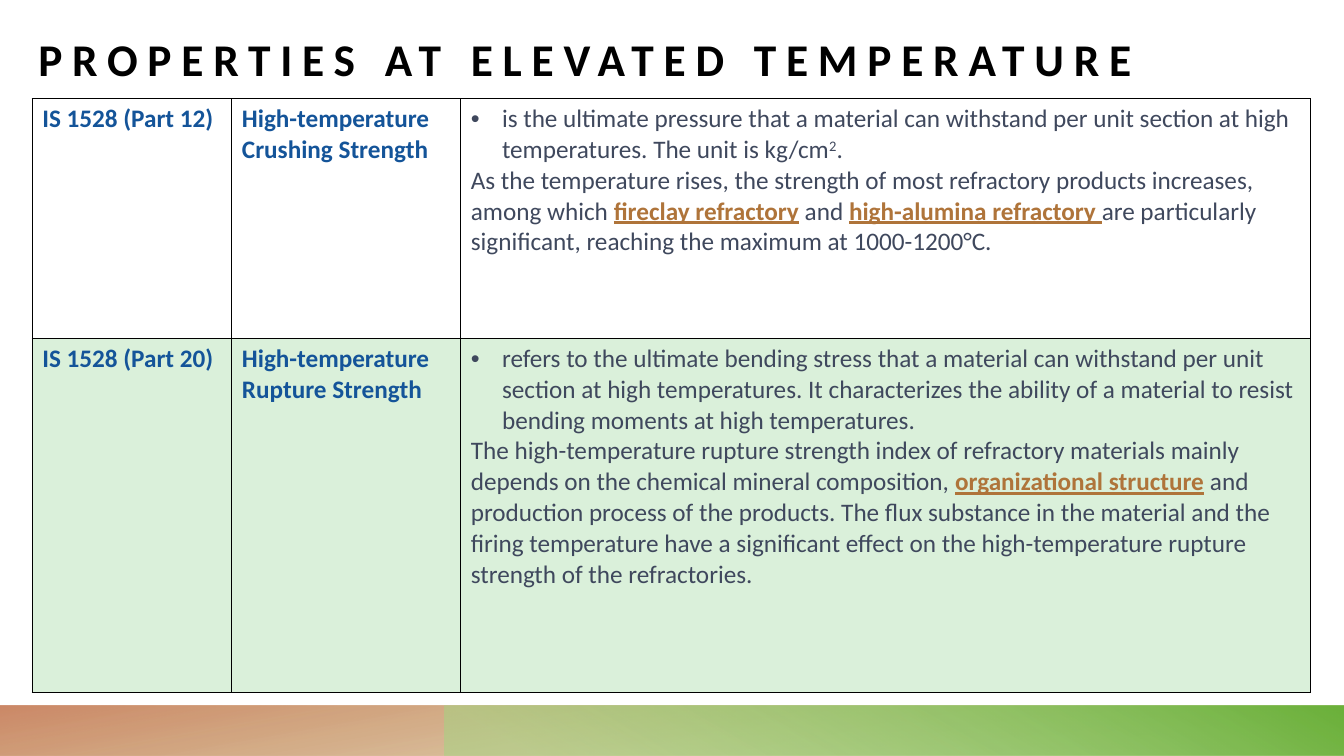
from lxml import etree
from pptx import Presentation
from pptx import util as u
from pptx.dml.color import RGBColor
from pptx.enum import shapes, text
from pptx.oxml.ns import qn

BLACK = RGBColor(0x00, 0x00, 0x00)
BLUE = RGBColor(0x14, 0x54, 0x99)
SLATE = RGBColor(0x3F, 0x48, 0x5D)
COPPER = RGBColor(0xAF, 0x74, 0x3A)
GREEN = RGBColor(0x47, 0xB5, 0x47)
OLIVE = RGBColor(0xB1, 0x93, 0x3B)
CLAY = RGBColor(0xC3, 0x74, 0x4D)
LIME = RGBColor(0xA6, 0xD6, 0x84)
LEAF = RGBColor(0x6C, 0xB1, 0x3B)
FONT = "Calibri"

HEADING = "PROPERTIES AT ELEVATED TEMPERATURE"
# Each paragraph is a list of (words, style); the first one of a cell is bulleted.
PROPERTIES = [
    ("IS 1528 (Part 12)", "High-temperature Crushing Strength", [
        [("is the ultimate pressure that a material can withstand per unit section "
          "at high temperatures. The unit is kg/cm", "plain"),
         ("2", "super"), (".", "plain")],
        [("As the temperature rises, the strength of most refractory products "
          "increases, among which ", "plain"),
         ("fireclay refractory", "term"), (" and ", "plain"),
         ("high-alumina refractory ", "term"),
         ("are particularly significant, reaching the maximum at 1000-1200°C.",
          "plain")],
    ]),
    ("IS 1528 (Part 20)", "High-temperature Rupture Strength", [
        [("refers to the ultimate bending stress that a material can withstand per "
          "unit section at high temperatures. It characterizes the ability of a "
          "material to resist bending moments at high temperatures.", "plain")],
        [("The high-temperature rupture strength index of refractory materials "
          "mainly depends on the chemical mineral composition, ", "plain"),
         ("organizational structure", "term"),
         (" and production process of the products. The flux substance in the "
          "material and the firing temperature have a significant effect on the "
          "high-temperature rupture strength of the refractories.", "plain")],
    ]),
]
COLUMNS = (1.98, 2.27, 8.43)
ROWS = (2.38, 3.51)
ROW_TINTS = (None, GREEN)
TABLE_LEFT, TABLE_TOP = 0.32, 0.98
WIDTH, HEIGHT = 13.33, 7.5
BAND_HEIGHT = HEIGHT / 15
# left, rotation, gradient angle (clockwise), stops as (position, colour, opacity)
BANDS = [
    (0, 180, 100, [(14, OLIVE, 28), (100, CLAY, 85)]),
    (WIDTH - 8.92, 0, 240, [(9, LIME, 55), (99, LEAF, 100)]),
]


def set_opacity(element, percents):
    """Give each RGB colour inside element its opacity in turn."""
    for colour, percent in zip(element.iter(qn("a:srgbClr")), percents):
        etree.SubElement(colour, qn("a:alpha"), val=str(percent * 1000))


def add_band(slide, left, rotation, angle, stops):
    band = slide.shapes.add_shape(
        shapes.MSO_SHAPE.RECTANGLE, u.Inches(left), u.Inches(HEIGHT - BAND_HEIGHT),
        u.Inches(WIDTH - left), u.Inches(BAND_HEIGHT))
    band.shadow.inherit = False
    band.line.fill.background()
    band.rotation = rotation
    properties = band._element.spPr
    properties.find(qn("a:xfrm")).set("flipH", "1")
    band.fill.gradient()
    band.fill.gradient_angle = 360 - angle
    for stop, (position, colour, _) in zip(band.fill.gradient_stops, stops):
        stop.position = position / 100
        stop.color.rgb = colour
    set_opacity(properties, [opacity for _, _, opacity in stops])


def style_run(run, style):
    run.font.name, run.font.size = FONT, u.Pt(18)
    run.font.bold = style in ("label", "term")
    run.font.underline = style == "term"
    run.font.color.rgb = {"label": BLUE, "term": COPPER}.get(style, SLATE)
    if style == "super":
        run.font._element.set("baseline", "30000")


def add_bullet(paragraph):
    properties = paragraph._p.get_or_add_pPr()
    indent = u.Inches(0.31)
    properties.set("marL", str(indent))
    properties.set("indent", str(-indent))
    etree.SubElement(properties, qn("a:buFont"), typeface="Arial")
    etree.SubElement(properties, qn("a:buChar"), char="•")


def fill_cell(cell, paragraphs, tint, bulleted):
    frame = cell.text_frame
    for number, pieces in enumerate(paragraphs):
        paragraph = frame.add_paragraph() if number else frame.paragraphs[0]
        if bulleted and number == 0:
            add_bullet(paragraph)
        for words, style in pieces:
            run = paragraph.add_run()
            run.text = words
            style_run(run, style)
    properties = cell._tc.get_or_add_tcPr()
    for side in ("a:lnL", "a:lnR", "a:lnT", "a:lnB"):
        border = etree.SubElement(properties, qn(side), w=str(u.Pt(1)))
        solid = etree.SubElement(border, qn("a:solidFill"))
        etree.SubElement(solid, qn("a:srgbClr"), val=str(BLACK))
    if tint is None:
        cell.fill.background()
    else:
        cell.fill.solid()
        cell.fill.fore_color.rgb = tint
        set_opacity(properties.find(qn("a:solidFill")), [20])


def add_heading(slide):
    title = slide.shapes.title
    title.left, title.top = u.Inches(0.38), u.Inches(0.28)
    title.width, title.height = u.Inches(11.69), u.Inches(0.57)
    frame = title.text_frame
    frame.text = HEADING
    frame.margin_left = frame.margin_right = 0
    frame.margin_top = frame.margin_bottom = 0
    frame.vertical_anchor = text.MSO_ANCHOR.BOTTOM
    frame.auto_size = text.MSO_AUTO_SIZE.NONE
    paragraph = frame.paragraphs[0]
    paragraph.alignment = text.PP_ALIGN.LEFT
    font = paragraph.runs[0].font
    font.name, font.size, font.bold = FONT, u.Pt(32.4), True
    font.color.rgb = BLACK
    font._element.set("spc", "700")


def add_properties(slide):
    table = slide.shapes.add_table(
        len(ROWS), len(COLUMNS), u.Inches(TABLE_LEFT), u.Inches(TABLE_TOP),
        u.Inches(sum(COLUMNS)), u.Inches(sum(ROWS))).table
    table.first_row = table.horz_banding = False
    for column, width in zip(table.columns, COLUMNS):
        column.width = u.Inches(width)
    for row, height, tint, (standard, name, details) in zip(
            table.rows, ROWS, ROW_TINTS, PROPERTIES):
        row.height = u.Inches(height)
        contents = ([[(standard, "label")]], [[(name, "label")]], details)
        for cell, paragraphs in zip(row.cells, contents):
            fill_cell(cell, paragraphs, tint, bulleted=paragraphs is details)


def main():
    deck = Presentation()
    deck.slide_width, deck.slide_height = u.Inches(WIDTH), u.Inches(HEIGHT)
    slide = deck.slides.add_slide(deck.slide_layouts.get_by_name("Title Only"))
    for band in BANDS:
        add_band(slide, *band)
    add_heading(slide)
    add_properties(slide)
    deck.save("out.pptx")


if __name__ == "__main__":
    main()
